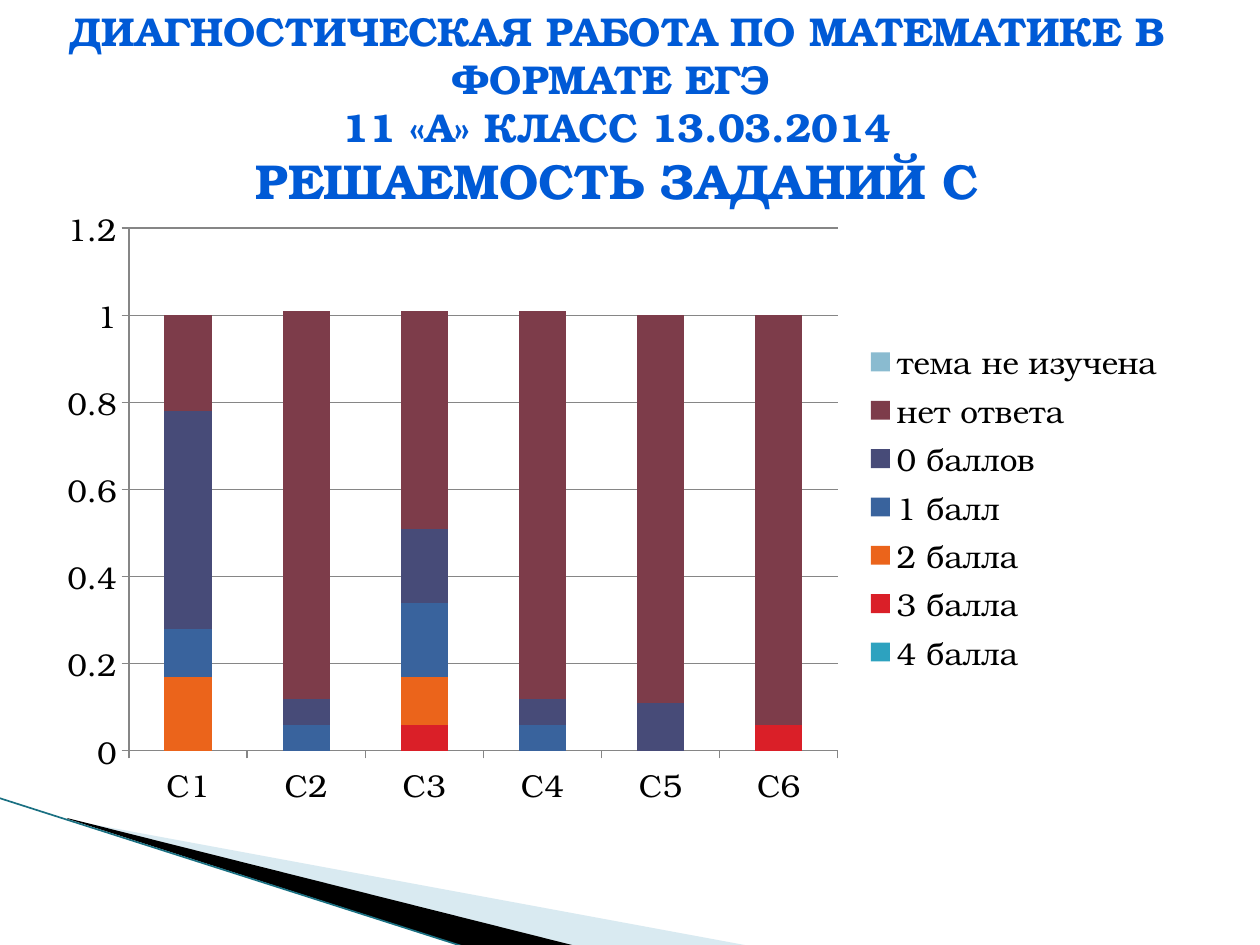
"""Build the slide on how many pupils solved the part C tasks."""
import copy

import pptx
import pptx.chart.data
import pptx.dml.color
import pptx.enum.chart
import pptx.enum.shapes
import pptx.enum.text
import pptx.oxml
import pptx.oxml.ns
import pptx.util

SCALE = 914400 / 126
FONT = "TeX Gyre Bonum"
COLORS = {
    "title": "005AD6",
    "text": "000000",
    "pale": "A0CBDC",
    "black": "000000",
    "edge": "1A7082",
    "grid": "868686",
}
SERIES = [
    ("4 балла", "2DA2BF", (None, None, None, None, 0, 0)),
    ("3 балла", "DA1F28", (None, None, 0.06, 0, 0, 0.06)),
    ("2 балла", "EB641B", (0.17, 0, 0.11, 0, 0, 0)),
    ("1 балл", "39639D", (0.11, 0.06, 0.17, 0.06, 0, 0)),
    ("0 баллов", "474B78", (0.5, 0.06, 0.17, 0.06, 0.11, 0)),
    ("нет ответа", "7D3C4A", (0.22, 0.89, 0.5, 0.89, 0.89, 0.94)),
    ("тема не изучена", "8ABBD0", (0, 0, 0, 0, 0, 0)),
]


def emu(*lengths):
    return [round(length * SCALE) for length in lengths]


def rgb(value):
    return pptx.dml.color.RGBColor.from_string(value)


deck = pptx.Presentation()
deck.slide_width, deck.slide_height = emu(1260, 945)
page = deck.slides.add_slide(deck.slide_layouts[5])

wedges = [
    ("pale", 40, [(69, 820), (750, 946), (575, 946), (69, 819)]),
    ("black", 100, [(67, 818), (576, 946), (469, 948), (68, 819)]),
]
for color, opacity, points in wedges:
    builder = page.shapes.build_freeform(*points[0], scale=SCALE)
    builder.add_line_segments(points[1:], close=True)
    wedge = builder.convert_to_shape()
    wedge.shadow.inherit = False
    wedge.line.fill.background()
    wedge.fill.solid()
    wedge.fill.fore_color.rgb = rgb(COLORS[color])
    if opacity < 100:
        tint = wedge.fill._xPr.find(".//" + pptx.oxml.ns.qn("a:srgbClr"))
        alpha = tint.makeelement(pptx.oxml.ns.qn("a:alpha"), {"val": str(opacity * 1000)})
        tint.append(alpha)

edge = page.shapes.add_connector(
    pptx.enum.shapes.MSO_CONNECTOR.STRAIGHT, *emu(-1, 798, 468, 948)
)
edge.line.color.rgb = rgb(COLORS["edge"])
edge.line.width = pptx.util.Pt(0.95)
properties = edge._element.spPr
properties.append(properties.makeelement(pptx.oxml.ns.qn("a:effectLst"), {}))

data = pptx.chart.data.CategoryChartData()
data.categories = [f"С{number}" for number in range(1, 7)]
for name, color, values in SERIES:
    data.add_series(name, values)
chart = page.shapes.add_chart(
    pptx.enum.chart.XL_CHART_TYPE.COLUMN_STACKED, *emu(44, 195, 1134, 624), data
).chart
chart.has_title = False
chart.font.name = FONT
chart.font.size = pptx.util.Pt(18)
chart.font.color.rgb = rgb(COLORS["text"])
chart.has_legend = True
chart.legend.position = pptx.enum.chart.XL_LEGEND_POSITION.RIGHT
chart.legend.include_in_layout = False

plot = chart.plots[0]
plot.gap_width = 150
plot.overlap = 100
plot.vary_by_categories = False
for series, (name, color, values) in zip(plot.series, SERIES):
    series.format.fill.solid()
    series.format.fill.fore_color.rgb = rgb(color)

scores = chart.value_axis
scores.minimum_scale, scores.maximum_scale, scores.major_unit = 0, 1.2, 0.2
scores.has_major_gridlines = True
for axis in (chart.category_axis, scores):
    axis.major_tick_mark = pptx.enum.chart.XL_TICK_MARK.OUTSIDE
for item in (chart.category_axis, scores, scores.major_gridlines):
    item.format.line.color.rgb = rgb(COLORS["grid"])
    item.format.line.width = pptx.util.Pt(0.75)

area = chart._chartSpace.chart.plotArea
for old in area.findall(pptx.oxml.ns.qn("c:layout")):
    area.remove(old)
frame = {"x": 85 / 1134, "y": 33 / 624, "w": 709 / 1134, "h": 523 / 624}
sizes = "".join(f'<c:{key} val="{value:.3f}"/>' for key, value in frame.items())
area.insert(0, pptx.oxml.parse_xml(
    f'<c:layout {pptx.oxml.ns.nsdecls("c")}><c:manualLayout><c:layoutTarget val="inner"/>'
    f'<c:xMode val="edge"/><c:yMode val="edge"/>{sizes}</c:manualLayout></c:layout>'
))

title = page.shapes.title
title.left, title.top, title.width, title.height = emu(-25, 38, 1285, 140)
box = title.text_frame
box.text = (
    "ДИАГНОСТИЧЕСКАЯ РАБОТА ПО МАТЕМАТИКЕ В ФОРМАТЕ ЕГЭ \v"
    "11 «А» КЛАСС 13.03.2014\vРЕШАЕМОСТЬ ЗАДАНИЙ С"
)
box.word_wrap = True
box.auto_size = pptx.enum.text.MSO_AUTO_SIZE.NONE
box.vertical_anchor = pptx.enum.text.MSO_ANCHOR.MIDDLE
para = box.paragraphs[0]
para.alignment = pptx.enum.text.PP_ALIGN.CENTER
for span, size in zip(para.runs, (23, 23, 28)):
    span.font.name = FONT
    span.font.size = pptx.util.Pt(size)
    span.font.bold = True
    span.font.color.rgb = rgb(COLORS["title"])
for line_break in para._p.findall(pptx.oxml.ns.qn("a:br")):
    line_break.append(copy.deepcopy(para.runs[0]._r.rPr))

deck.save("out.pptx")
